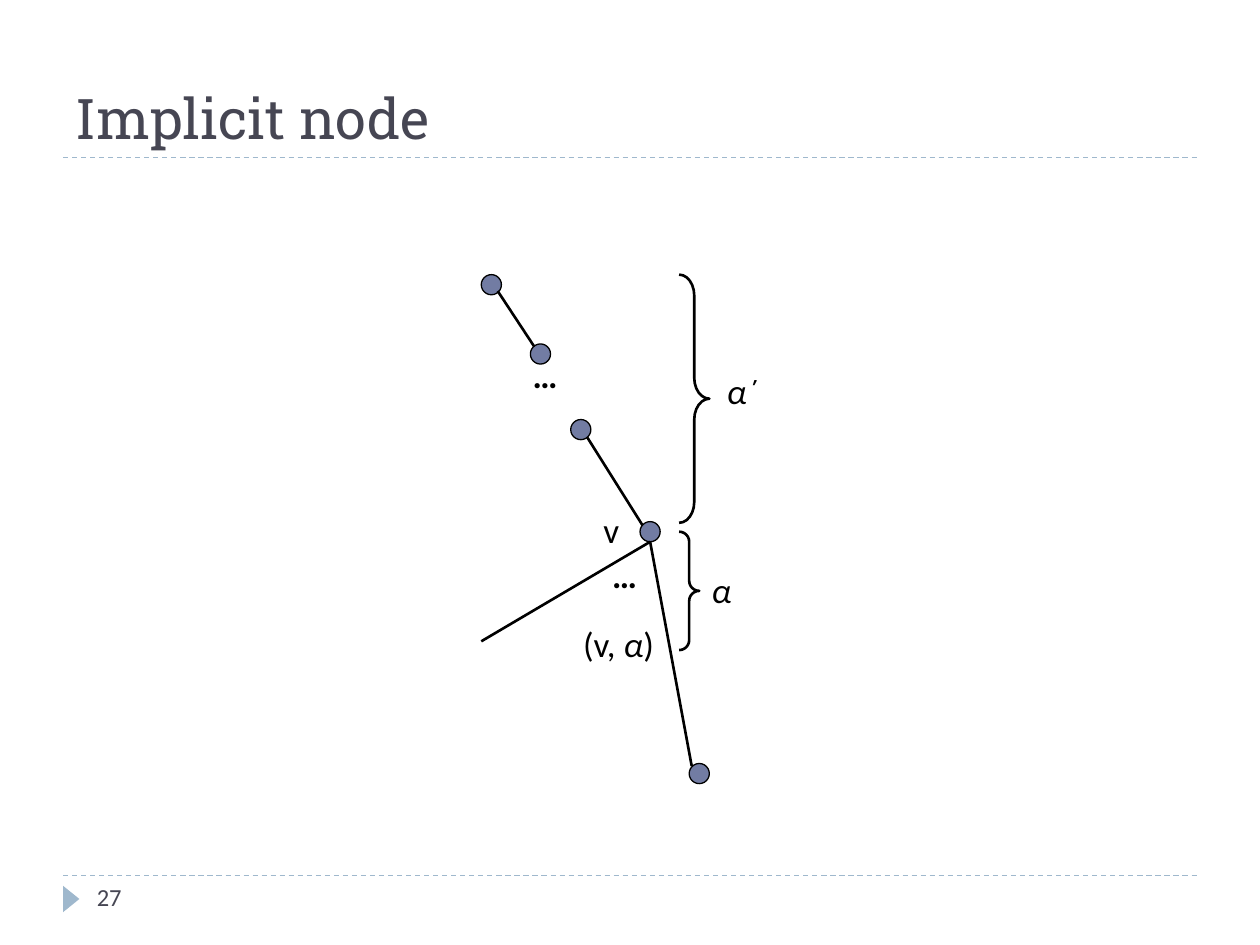
"""Build the slide that explains an implicit node in a suffix tree."""
from lxml.etree import SubElement
from pptx import Presentation
from pptx.dml.color import RGBColor
from pptx.enum.dml import MSO_LINE
from pptx.enum.shapes import MSO_CONNECTOR, MSO_SHAPE
from pptx.enum.text import MSO_ANCHOR, PP_ALIGN
from pptx.oxml.ns import qn
from pptx.util import Inches, Pt

BLACK = RGBColor(0x00, 0x00, 0x00)
SLATE = RGBColor(0x46, 0x46, 0x53)
NODE_BLUE = RGBColor(0x72, 0x7C, 0xA3)
PALE_BLUE = RGBColor(0x9F, 0xB8, 0xCD)

TITLE = "Implicit node"
PAGE_NUMBER = "27"
NODE_SIZE = 0.16
NODES = [(3.82, 2.18), (4.21, 2.73), (4.53, 3.33), (5.08, 4.14), (5.47, 6.06)]
EDGES = [
    ((3.95, 2.31), (4.24, 2.75)),
    ((4.66, 3.47), (5.1, 4.17)),
    ((5.16, 4.3), (5.49, 6.08)),
    ((5.16, 4.3), (3.82, 5.09)),
]
RULES = [((0.5, y), (9.5, y)) for y in (1.25, 6.95)]
BRACES = [((5.39, 2.18, 0.24, 1.97), 0.689), ((5.39, 4.22, 0.16, 0.94), 0.498)]
LABELS = [
    ((4.13, 2.76, 0.63, 0.43), [("…", "bold")]),
    ((4.76, 4.34, 0.63, 0.43), [("…", "bold")]),
    ((4.69, 3.99, 0.31, 0.43), [("v", "plain")]),
    ((4.53, 4.89, 0.94, 0.43), [("(v, ", "plain"), ("α", "italic"), (")", "plain")]),
    ((5.55, 4.46, 0.71, 0.43), [("α", "italic")]),
    ((5.67, 2.88, 1.07, 0.43), [("α´", "italic")]),
]


def add_line(page, start, end, color, width, dash=None):
    points = [Inches(value) for value in (*start, *end)]
    line = page.shapes.add_connector(MSO_CONNECTOR.STRAIGHT, *points)
    line.line.color.rgb = color
    line.line.width = Pt(width)
    if dash:
        line.line.dash_style = dash
    SubElement(line._element.spPr, qn("a:effectLst"))


def add_figure(page, kind, bounds, fill=None, line_width=None):
    figure = page.shapes.add_shape(kind, *map(Inches, bounds))
    figure.shadow.inherit = False
    if fill is None:
        figure.fill.background()
    else:
        figure.fill.solid()
        figure.fill.fore_color.rgb = fill
    if line_width is None:
        figure.line.fill.background()
    else:
        figure.line.color.rgb = BLACK
        figure.line.width = Pt(line_width)
    return figure


def set_font(font, name, size, color):
    font.name, font.size = name, Pt(size)
    font.color.rgb = color


def add_text(page, bounds, spans, size, color):
    box = page.shapes.add_textbox(*map(Inches, bounds))
    box.text_frame.word_wrap = True
    para = box.text_frame.paragraphs[0]
    set_font(para.font, "Calibri", size, color)
    for text, style in spans:
        span = para.add_run()
        span.text = text
        if style == "bold":
            span.font.bold = True
        elif style == "italic":
            span.font.italic = True


def main():
    deck = Presentation()
    deck.slide_width, deck.slide_height = Inches(10), Inches(7.5)
    page = deck.slides.add_slide(deck.slide_layouts[5])

    title = page.shapes.title
    title.left, title.top, title.width, title.height = map(Inches, (0.5, 0.25, 9, 1))
    title.text_frame.text = TITLE
    title.text_frame.vertical_anchor = MSO_ANCHOR.BOTTOM
    para = title.text_frame.paragraphs[0]
    para.alignment = PP_ALIGN.LEFT
    set_font(para.font, "Roboto Slab", 32, SLATE)

    for start, end in RULES:
        add_line(page, start, end, PALE_BLUE, 0.75, MSO_LINE.DASH)
    marker = add_figure(page, MSO_SHAPE.ISOSCELES_TRIANGLE, (0.46, 7.07, 0.21, 0.13), PALE_BLUE)
    marker.rotation = 90
    add_text(page, (0.67, 6.95, 2.17, 0.4), [(PAGE_NUMBER, "plain")], 14, SLATE)

    for left, top in NODES:
        add_figure(page, MSO_SHAPE.OVAL, (left, top, NODE_SIZE, NODE_SIZE), NODE_BLUE, 0.75)
    for start, end in EDGES:
        add_line(page, start, end, BLACK, 1.5)
    for bounds, curve in BRACES:
        brace = add_figure(page, MSO_SHAPE.RIGHT_BRACE, bounds, line_width=1.5)
        brace.adjustments[0] = curve
    for bounds, spans in LABELS:
        add_text(page, bounds, spans, 20, BLACK)

    deck.save("out.pptx")


if __name__ == "__main__":
    main()
